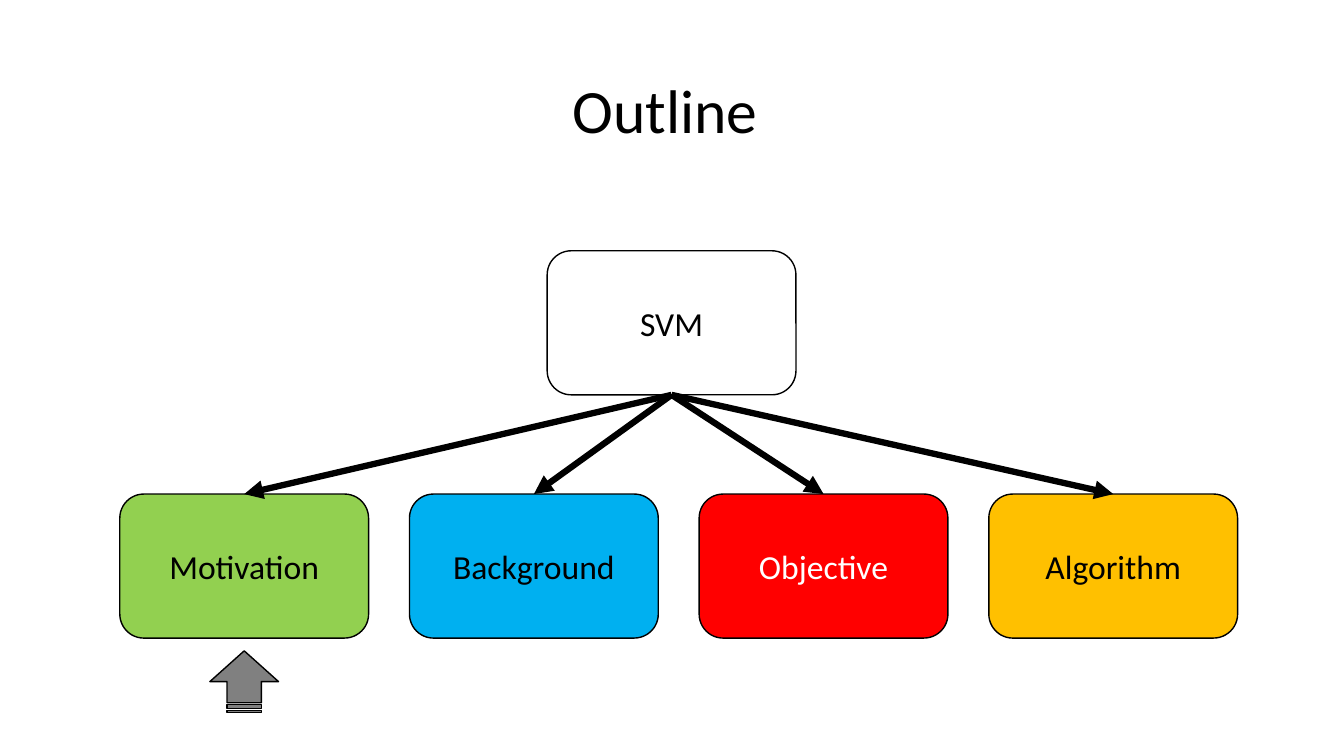
import pptx
import pptx.util
import pptx.dml.color
import pptx.enum.shapes
import pptx.enum.text
import pptx.oxml
import pptx.oxml.ns
from dataclasses import dataclass

Cm, Pt = pptx.util.Cm, pptx.util.Pt
SHAPE = pptx.enum.shapes.MSO_SHAPE

TITLE = "Outline "
ROOT = ("SVM", "FFFFFF", "000000")
TOPICS = [
    ("Motivation", "92D050", "000000"),
    ("Background", "00B0F0", "000000"),
    ("Objective", "FF0000", "FFFFFF"),
    ("Algorithm", "FFC000", "000000"),
]
CURRENT = 0


@dataclass(frozen=True)
class Theme:
    font: str = "Calibri"
    ink: str = "000000"
    marker: str = "808080"
    title_size: float = 44
    box_size: float = 24
    outline: float = 1
    arrow: float = 4.5


THEME = Theme()
BOX_W, BOX_H = 6.27, 3.63
ROOT_LEFT, ROOT_TOP = 13.79, 6.32
ROW_LEFT, ROW_TOP, PITCH = 3.02, 12.45, 7.3
MARKER_W, MARKER_H, MARKER_TOP = 1.55, 1.73, 16.31


def rgb(value):
    return pptx.dml.color.RGBColor.from_string(value)


def set_attrs(obj, values):
    for name, value in values.items():
        setattr(obj, name, value)


def write(tf, text, size, color):
    set_attrs(tf, {"word_wrap": True,
                   "vertical_anchor": pptx.enum.text.MSO_ANCHOR.MIDDLE})
    p = tf.paragraphs[0]
    p.alignment = pptx.enum.text.PP_ALIGN.CENTER
    r = p.add_run()
    r.text = text
    set_attrs(r.font, {"name": THEME.font, "size": Pt(size)})
    r.font.color.rgb = rgb(color)
    return p


def add_shape(s, kind, left, top, width, height, fill):
    sp = s.shapes.add_shape(kind, Cm(left), Cm(top), Cm(width), Cm(height))
    sp.shadow.inherit = False
    sp.fill.solid()
    sp.fill.fore_color.rgb = rgb(fill)
    sp.line.color.rgb = rgb(THEME.ink)
    sp.line.width = Pt(THEME.outline)
    return sp


def add_box(s, left, top, label, fill, color):
    sp = add_shape(s, SHAPE.ROUNDED_RECTANGLE, left, top, BOX_W, BOX_H, fill)
    write(sp.text_frame, label, THEME.box_size, color)
    return sp


def add_arrow(s, start, end):
    line = s.shapes.add_connector(
        pptx.enum.shapes.MSO_CONNECTOR.STRAIGHT, 0, 0, 0, 0)
    line.begin_connect(start, 2)
    line.end_connect(end, 0)
    line.line.color.rgb = rgb(THEME.ink)
    line.line.width = Pt(THEME.arrow)
    ns = pptx.oxml.ns.nsdecls("a")
    line.line._get_or_add_ln().append(
        pptx.oxml.parse_xml(f'<a:tailEnd {ns} type="triangle"/>'))
    line._element.spPr.append(pptx.oxml.parse_xml(f"<a:effectLst {ns}/>"))


def main():
    prs = pptx.Presentation()
    set_attrs(prs, {"slide_width": Cm(33.87), "slide_height": Cm(19.05)})
    s = prs.slides.add_slide(prs.slide_layouts[5])

    title = s.shapes.title
    set_attrs(title, {"left": Cm(2.33), "top": Cm(1.01),
                      "width": Cm(29.21), "height": Cm(3.68)})
    p = write(title.text_frame, TITLE, THEME.title_size, THEME.ink)
    p.line_spacing = 0.9

    root = add_box(s, ROOT_LEFT, ROOT_TOP, *ROOT)
    for i, topic in enumerate(TOPICS):
        box = add_box(s, ROW_LEFT + i * PITCH, ROW_TOP, *topic)
        add_arrow(s, root, box)

    center = ROW_LEFT + CURRENT * PITCH + BOX_W / 2
    marker = add_shape(s, SHAPE.STRIPED_RIGHT_ARROW, center - MARKER_W / 2,
                       MARKER_TOP, MARKER_W, MARKER_H, THEME.marker)
    marker.rotation = 270

    prs.save("out.pptx")


if __name__ == "__main__":
    main()
